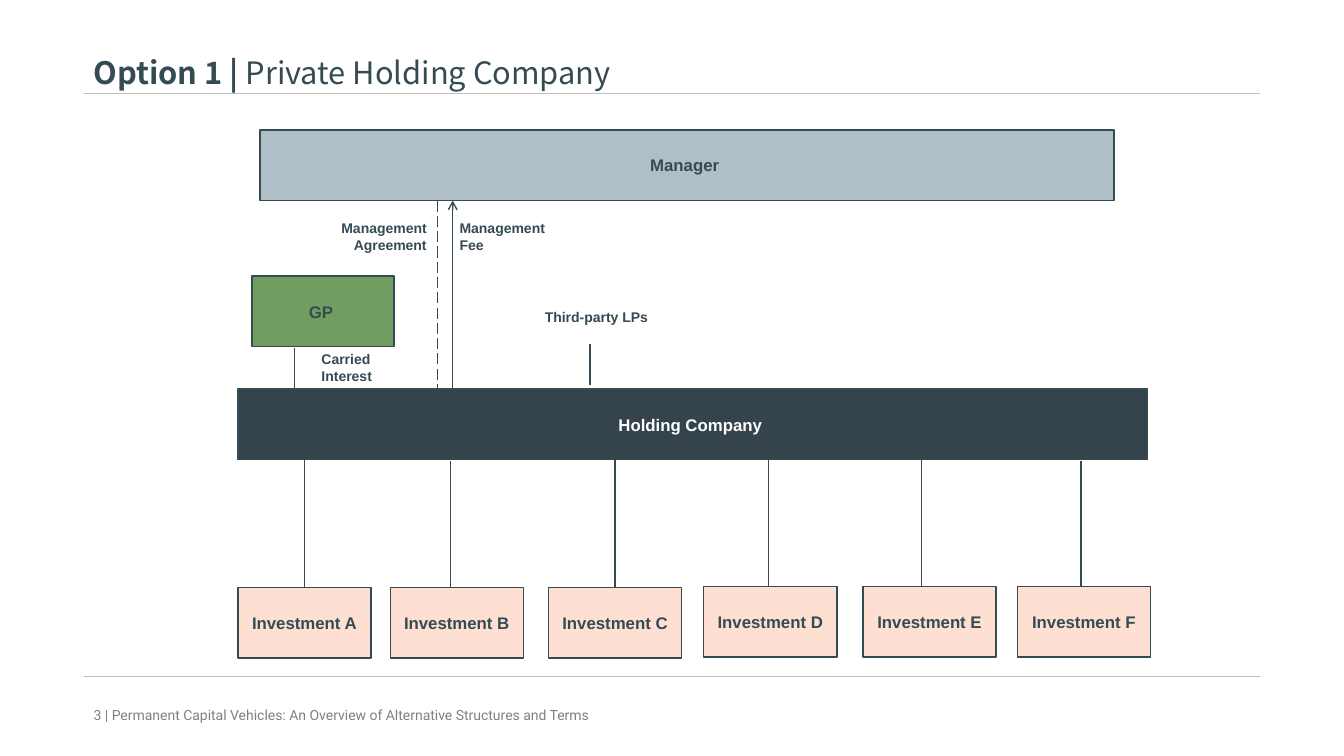
from lxml import etree
from pptx import Presentation
from pptx.dml.color import RGBColor
from pptx.enum.dml import MSO_LINE
from pptx.enum.shapes import MSO_CONNECTOR, MSO_SHAPE
from pptx.enum.text import MSO_ANCHOR, MSO_AUTO_SIZE, PP_ALIGN
from pptx.oxml.ns import qn
from pptx.util import Inches, Pt

INK = "354B54"
RULE = "BFBFBF"

presentation = Presentation()
presentation.slide_width = Inches(13.33)
presentation.slide_height = Inches(7.5)
slide = presentation.slides.add_slide(presentation.slide_layouts[5])


def write(shape, runs, size, font, color, align, anchor):
    """Fill a shape with one paragraph of (text, bold) runs."""
    frame = shape.text_frame
    frame.word_wrap = True
    frame.auto_size = MSO_AUTO_SIZE.NONE
    frame.vertical_anchor = anchor
    paragraph = frame.paragraphs[0]
    paragraph.alignment = align
    for text, bold in runs:
        run = paragraph.add_run()
        run.text = text
        run.font.size = Pt(size)
        run.font.name = font
        run.font.bold = bold
        run.font.color.rgb = RGBColor.from_string(color)


def add_line(x1, y1, x2, y2, color=INK, width=1):
    connector = slide.shapes.add_connector(
        MSO_CONNECTOR.STRAIGHT, Inches(x1), Inches(y1), Inches(x2), Inches(y2))
    connector.line.color.rgb = RGBColor.from_string(color)
    connector.line.width = Pt(width)
    etree.SubElement(connector._element.spPr, qn("a:effectLst"))
    return connector


# Title between the page rules
add_line(0.83, 0.93, 12.5, 0.93, RULE)
add_line(0.83, 6.71, 12.5, 6.71, RULE, 0.75)
title = slide.shapes.title
title.left, title.top = Inches(0.83), Inches(0.48)
title.width, title.height = Inches(11.67), Inches(0.47)
write(title, [("Option 1 | ", True), ("Private Holding Company", False)],
      22, "Noto Sans CJK JP", INK, PP_ALIGN.LEFT, MSO_ANCHOR.MIDDLE)

# Links between the manager, the partners and the holding company
fee_arrow = add_line(4.49, 3.86, 4.49, 1.99)
etree.SubElement(fee_arrow.line._get_or_add_ln(), qn("a:tailEnd"), type="arrow")
agreement_line = add_line(4.34, 1.99, 4.34, 3.86)
agreement_line.line.dash_style = MSO_LINE.LONG_DASH
add_line(2.92, 3.86, 2.92, 3.45)
add_line(5.85, 3.82, 5.85, 3.41)

# Boxes: text, left, top, width, fill, text colour
boxes = [
    ("Manager ", 2.58, 1.29, 8.47, "AFBFC7", INK),
    ("GP ", 2.5, 2.74, 1.41, "709E61", INK),
    ("Holding Company ", 2.36, 3.86, 9.02, "35444C", "FFFFFF"),
]

# Investments: letter, box left, box top, line x, line top
investments = [
    ("A", 2.36, 5.83, 3.02, 4.55),
    ("B", 3.87, 5.83, 4.47, 4.57),
    ("C", 5.44, 5.83, 6.1, 4.55),
    ("D", 6.98, 5.82, 7.62, 4.54),
    ("E", 8.56, 5.82, 9.14, 4.53),
    ("F", 10.09, 5.82, 10.72, 4.57),
]
for letter, left, top, line_x, line_top in investments:
    add_line(line_x, top, line_x, line_top)
    boxes.append((f"Investment {letter}", left, top, 1.32, "FDE0D1", INK))

for text, left, top, width, fill, color in boxes:
    box = slide.shapes.add_shape(
        MSO_SHAPE.RECTANGLE, Inches(left), Inches(top), Inches(width), Inches(0.7))
    box.shadow.inherit = False
    box.fill.solid()
    box.fill.fore_color.rgb = RGBColor.from_string(fill)
    box.line.color.rgb = RGBColor.from_string(INK)
    box.line.width = Pt(1)
    write(box, [(text, True)], 12, "Arial", color, PP_ALIGN.CENTER, MSO_ANCHOR.MIDDLE)

# Labels beside the links
labels = [
    ("Management Agreement", 3.17, 2.13, 1.16, 0.44, PP_ALIGN.RIGHT),
    ("Management Fee", 4.46, 2.13, 1.25, 0.44, PP_ALIGN.LEFT),
    ("Carried Interest", 3.09, 3.43, 1.02, 0.44, PP_ALIGN.LEFT),
    ("Third-party LPs", 5.05, 3.01, 1.73, 0.27, PP_ALIGN.CENTER),
]
for text, left, top, width, height, align in labels:
    label = slide.shapes.add_textbox(
        Inches(left), Inches(top), Inches(width), Inches(height))
    write(label, [(text, True)], 10, "Arial", INK, align, MSO_ANCHOR.TOP)

# Footer
footer = slide.shapes.add_textbox(Inches(0.83), Inches(6.89), Inches(6.09), Inches(0.4))
footer_text = "3 | Permanent Capital Vehicles: An Overview of Alternative Structures and Terms"
write(footer, [(footer_text, False)], 10, "Roboto", "808080",
      PP_ALIGN.LEFT, MSO_ANCHOR.MIDDLE)

presentation.save("out.pptx")
